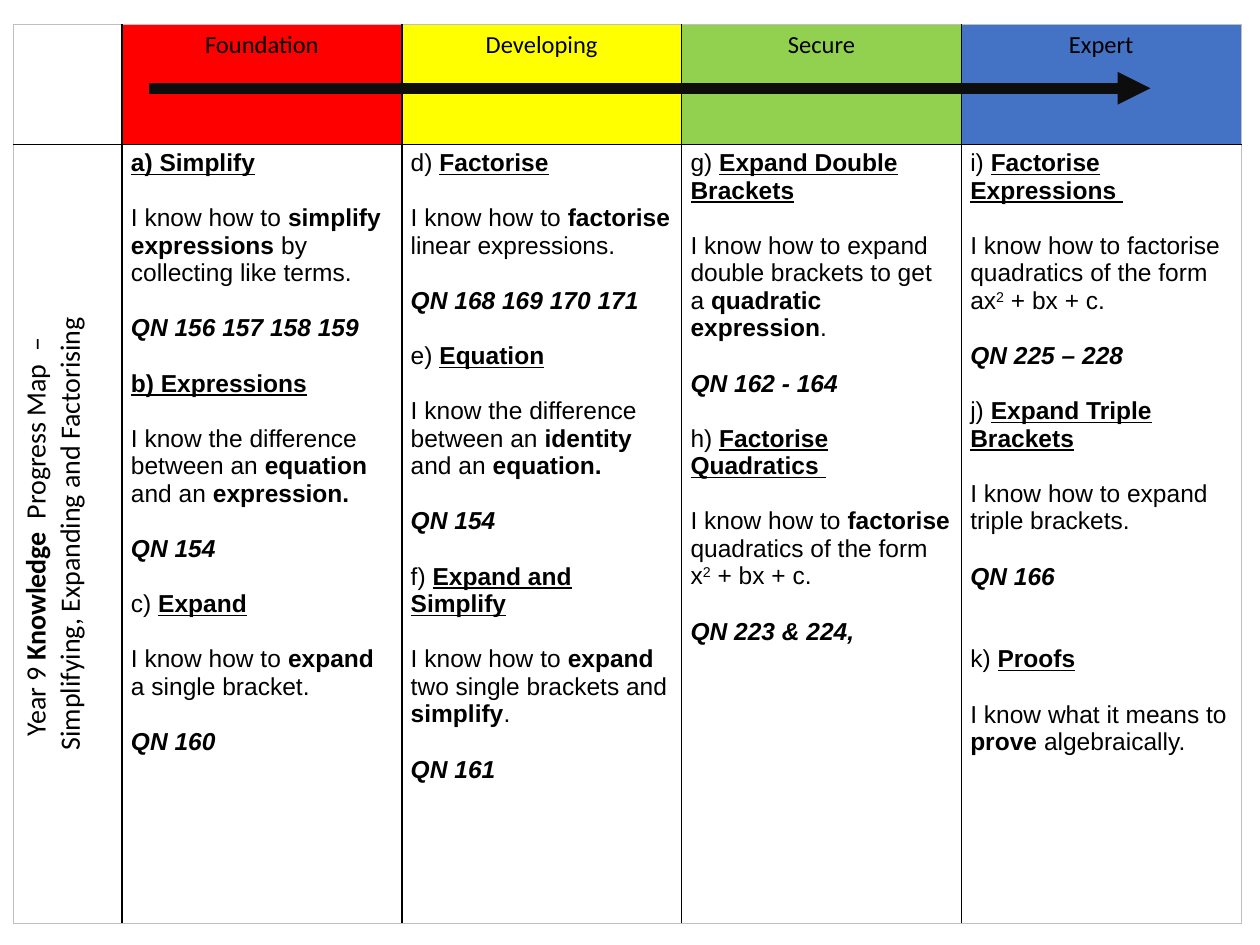
from lxml.etree import SubElement
from pptx import Presentation
from pptx.dml.color import RGBColor
from pptx.enum.shapes import MSO_CONNECTOR as Connector
from pptx.enum.text import PP_ALIGN as Align
from pptx.oxml import parse_xml
from pptx.oxml.ns import nsdecls, qn
from pptx.util import Cm, Pt

BLACK = RGBColor(0x00, 0x00, 0x00)
INK = RGBColor(0x0D, 0x0D, 0x0D)
GREY = RGBColor(0xBF, 0xBF, 0xBF)
RED = RGBColor(0xFF, 0x00, 0x00)
YELLOW = RGBColor(0xFF, 0xFF, 0x00)
GREEN = RGBColor(0x92, 0xD0, 0x50)
BLUE = RGBColor(0x44, 0x72, 0xC4)

# Each topic: label, heading, body paragraphs, reference, blank lines above.
# In the body, *...* is bold and ^...^ is superscript.
STAGES = [
    ("Foundation", RED, [
        ("a) ", "Simplify",
         ["I know how to *simplify expressions *by collecting like terms."],
         "QN 156 157 158 159", 0),
        ("b) ", "Expressions",
         ["I know the difference between an *equation* and an *expression.*"],
         "QN 154", 1),
        ("c) ", "Expand", ["I know how to *expand* a single bracket."],
         "QN 160", 1),
    ]),
    ("Developing", YELLOW, [
        ("d) ", "Factorise", ["I know how to *factorise* linear expressions."],
         "QN 168 169 170 171", 0),
        ("e) ", "Equation",
         ["I know the difference between an *identity* and an *equation.*"],
         "QN 154", 1),
        ("f) ", "Expand and Simplify",
         ["I know how to *expand* two single brackets and *simplify*."],
         "QN 161", 1),
    ]),
    ("Secure", GREEN, [
        ("g) ", "Expand Double Brackets",
         ["I know how to expand double brackets to get a *quadratic expression*."],
         "QN 162 - 164", 0),
        ("h) ", "Factorise Quadratics ",
         ["I know how to *factorise* quadratics of the form",
          "x^2^ + bx + c."],
         "QN 223 & 224,", 1),
    ]),
    ("Expert", BLUE, [
        ("i) ", "Factorise Expressions ",
         ["I know how to factorise quadratics of the form",
          "ax^2^ + bx + c."],
         "QN 225 – 228", 0),
        ("j) ", "Expand Triple Brackets",
         ["I know how to expand triple brackets."], "QN 166", 1),
        ("k) ", "Proofs", ["I know what it means to *prove *algebraically."],
         "", 2),
    ]),
]
BOLD_LABELS = ("a) ", "b) ")


class ProgressMap:
    heading_font = "Calibri"
    body_font = "Arial"
    size = 14
    title_size = 16
    line_gap = 15.8

    def __init__(self, deck):
        self.slide = deck.slides.add_slide(deck.slide_layouts[6])

    def span(self, para, text, font, size=size, bold=False, italic=False,
             underline=False, raised=False):
        span = para.add_run()
        span.text = text
        style = span.font
        style.name, style.size = font, Pt(size)
        style.bold, style.italic, style.underline = bold, italic, underline
        style.color.rgb = BLACK
        if raised:
            span._r.get_or_add_rPr().set("baseline", "30000")

    def para(self, cell, gap=0, align=Align.LEFT):
        frame = cell.text_frame
        para = frame.paragraphs[0]
        if para.runs:
            para = frame.add_paragraph()
        para.alignment = align
        para.space_before = Pt(gap * self.line_gap)
        return para

    def body(self, cell, text, gap):
        para = self.para(cell, gap)
        for index, part in enumerate(text.split("*")):
            for level, piece in enumerate(part.split("^")):
                if piece:
                    self.span(para, piece, self.body_font,
                              bold=index % 2 == 1, raised=level % 2 == 1)

    def topic(self, cell, label, heading, lines, reference, gap):
        para = self.para(cell, gap)
        strong = label in BOLD_LABELS
        self.span(para, label, self.body_font, bold=strong, underline=strong)
        self.span(para, heading, self.body_font, bold=True, underline=True)
        for index, line in enumerate(lines):
            self.body(cell, line, 1 if index == 0 else 0)
        if reference:
            self.span(self.para(cell, 1), reference, self.body_font,
                      bold=True, italic=True)

    def borders(self, cell, outer):
        properties = cell._tc.get_or_add_tcPr()
        for index, side in enumerate("LRTB"):
            color, width = (GREY, Pt(0.5)) if side in outer else (BLACK, Pt(1))
            properties.insert(index, parse_xml(
                f'<a:ln{side} {nsdecls("a")} w="{width}"><a:solidFill>'
                f'<a:srgbClr val="{color}"/></a:solidFill></a:ln{side}>'))

    def table(self, left, top, widths, heights):
        frame = self.slide.shapes.add_table(
            len(heights), len(widths), Cm(left), Cm(top),
            Cm(sum(widths)), Cm(sum(heights)))
        table = frame.table
        table.first_row = table.horz_banding = False
        for column, width in zip(table.columns, widths):
            column.width = Cm(width)
        for row, height in zip(table.rows, heights):
            row.height = Cm(height)
        for r in range(len(heights)):
            for c in range(len(widths)):
                cell = table.cell(r, c)
                cell.margin_left = cell.margin_right = Cm(0.18)
                cell.margin_top = cell.margin_bottom = Cm(0.1)
                cell.fill.background()
                outer = ("T" if r == 0 else "B")
                outer += "L" if c == 0 else ""
                outer += "R" if c == len(widths) - 1 else ""
                self.borders(cell, outer)
        return table

    def title(self, cell, lines):
        cell._tc.get_or_add_tcPr().set("vert", "vert270")
        for line in lines:
            para = self.para(cell, align=Align.CENTER)
            for index, part in enumerate(line.split("*")):
                self.span(para, part, self.heading_font, self.title_size,
                          bold=index % 2 == 1)

    def header(self, cell, text, color):
        cell.fill.solid()
        cell.fill.fore_color.rgb = color
        self.span(self.para(cell, align=Align.CENTER), text, self.heading_font)

    def arrow(self, start, end, y, width):
        arrow = self.slide.shapes.add_connector(
            Connector.STRAIGHT, Cm(start), Cm(y), Cm(end), Cm(y))
        arrow.line.color.rgb = INK
        arrow.line.width = Pt(width)
        SubElement(arrow.line._ln, qn("a:tailEnd"), type="triangle")
        SubElement(arrow._element.spPr, qn("a:effectLst"))


def main():
    deck = Presentation()
    deck.slide_width, deck.slide_height = Cm(25.4), Cm(19.05)
    page = ProgressMap(deck)

    # Grid with the rotated title
    table = page.table(0.28, 0.5, [2.18] + [5.64] * len(STAGES), [2.41, 15.7])
    page.title(table.cell(1, 0), ["Year 9 *Knowledge * Progress Map  – ",
                                  "Simplifying, Expanding and Factorising"])

    # Stages
    for column, (name, color, topics) in enumerate(STAGES, 1):
        page.header(table.cell(0, column), name, color)
        for topic in topics:
            page.topic(table.cell(1, column), *topic)

    # Progress arrow
    page.arrow(3, 23.19, 1.78, 6.25)
    deck.save("out.pptx")


if __name__ == "__main__":
    main()
